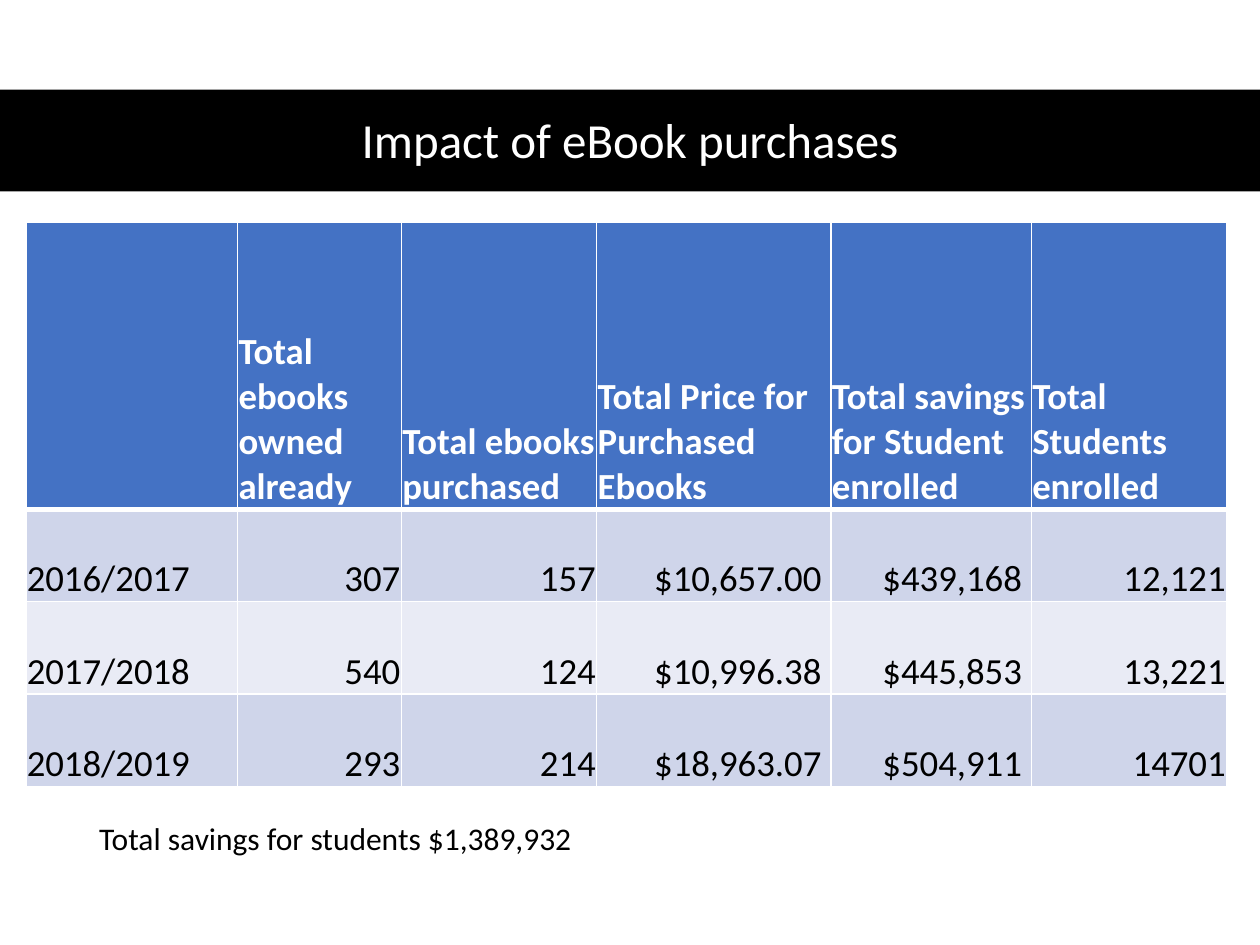
from lxml import etree
from pptx import Presentation
from pptx import util as u
from pptx.dml.color import RGBColor
from pptx.enum import shapes, text
from pptx.oxml import ns

HUES = {"ink": "000000", "paper": "FFFFFF", "head": "4472C4",
        "odd": "CFD5EA", "even": "E9EBF5"}
FONT = "Calibri"
COLS = [4.27, 3.3, 3.94, 4.72, 4.04, 3.94]
ROWS = [5.79, 1.86, 1.86, 1.86]
DATA = [
    ["", "Total ebooks owned already", "Total ebooks purchased",
     "Total Price for Purchased Ebooks", "Total savings for Student enrolled",
     "Total Students enrolled"],
    ["2016/2017", "307", "157", "$10,657.00 ", "$439,168 ", "12,121"],
    ["2017/2018", "540", "124", "$10,996.38 ", "$445,853 ", "13,221"],
    ["2018/2019", "293", "214", "$18,963.07 ", "$504,911 ", "14701"],
]


def tint(name):
    """Return the named colour."""
    return RGBColor.from_string(HUES[name])


def style(para, size, hue, bold=False, align=text.PP_ALIGN.LEFT):
    """Format a paragraph and its runs."""
    para.alignment = align
    for run in para.runs:
        font = run.font
        font.name, font.size, font.bold = FONT, u.Pt(size), bold
        font.color.rgb = tint(hue)


def add_band(slide, top, height):
    """Add the full-width bar behind the title."""
    band = slide.shapes.add_shape(shapes.MSO_SHAPE.RECTANGLE, 0, u.Cm(top),
                                  u.Cm(25.4), u.Cm(height))
    band.shadow.inherit = False
    band.fill.solid()
    band.fill.fore_color.rgb = tint("ink")
    band.line.fill.background()


def add_label(slide, words, box, size, hue, align=text.PP_ALIGN.LEFT):
    """Add one line of text, centred vertically in its box."""
    frame = slide.shapes.add_textbox(*map(u.Cm, box)).text_frame
    frame.word_wrap = True
    frame.vertical_anchor = text.MSO_ANCHOR.MIDDLE
    frame.text = words
    style(frame.paragraphs[0], size, hue, align=align)
    return frame


def add_edge(cell, side, width):
    """Draw one white border of a cell."""
    line = etree.SubElement(cell._tc.get_or_add_tcPr(), ns.qn("a:ln" + side),
                            w=str(u.Pt(width)))
    fill = etree.SubElement(line, ns.qn("a:solidFill"))
    etree.SubElement(fill, ns.qn("a:srgbClr"), val=HUES["paper"])


def fill_cell(cell, words, row, col):
    """Set the text, borders and fill of a cell by its place."""
    head = row == 0
    cell.margin_left = cell.margin_right = cell.margin_top = u.Cm(0.02)
    cell.margin_bottom = 0
    cell.vertical_anchor = text.MSO_ANCHOR.BOTTOM
    cell.text_frame.text = words
    right = not head and col > 0
    style(cell.text_frame.paragraphs[0], 21, "paper" if head else "ink", head,
          text.PP_ALIGN.RIGHT if right else text.PP_ALIGN.LEFT)
    for side, width in (("L", 1), ("R", 1), ("T", 3 if row == 1 else 1),
                        ("B", 3 if head else 1)):
        add_edge(cell, side, width)
    cell.fill.solid()
    cell.fill.fore_color.rgb = tint("head" if head else "odd" if row % 2 else "even")


def add_grid(slide, left, top):
    """Add the table of purchases by year."""
    grid = slide.shapes.add_table(len(ROWS), len(COLS), u.Cm(left), u.Cm(top),
                                  u.Cm(sum(COLS)), u.Cm(sum(ROWS))).table
    for col, width in zip(grid.columns, COLS):
        col.width = u.Cm(width)
    for row, height in zip(grid.rows, ROWS):
        row.height = u.Cm(height)
    for row, line in enumerate(DATA):
        for col, words in enumerate(line):
            fill_cell(grid.cell(row, col), words, row, col)


def main():
    """Build and save the slide."""
    deck = Presentation()
    deck.slide_width, deck.slide_height = u.Cm(25.4), u.Cm(19.05)
    slide = deck.slides.add_slide(deck.slide_layouts[6])
    add_band(slide, 1.81, 2.05)
    title = add_label(slide, "Impact of eBook purchases", (1.75, 1.88, 21.9, 1.98),
                      28, "paper", text.PP_ALIGN.CENTER)
    title.paragraphs[0].line_spacing = 0.9
    add_grid(slide, 0.52, 4.48)
    add_label(slide, "Total savings for students $1,389,932",
              (1.75, 16.38, 13.34, 1.03), 18, "ink")
    deck.save("out.pptx")


if __name__ == "__main__":
    main()
